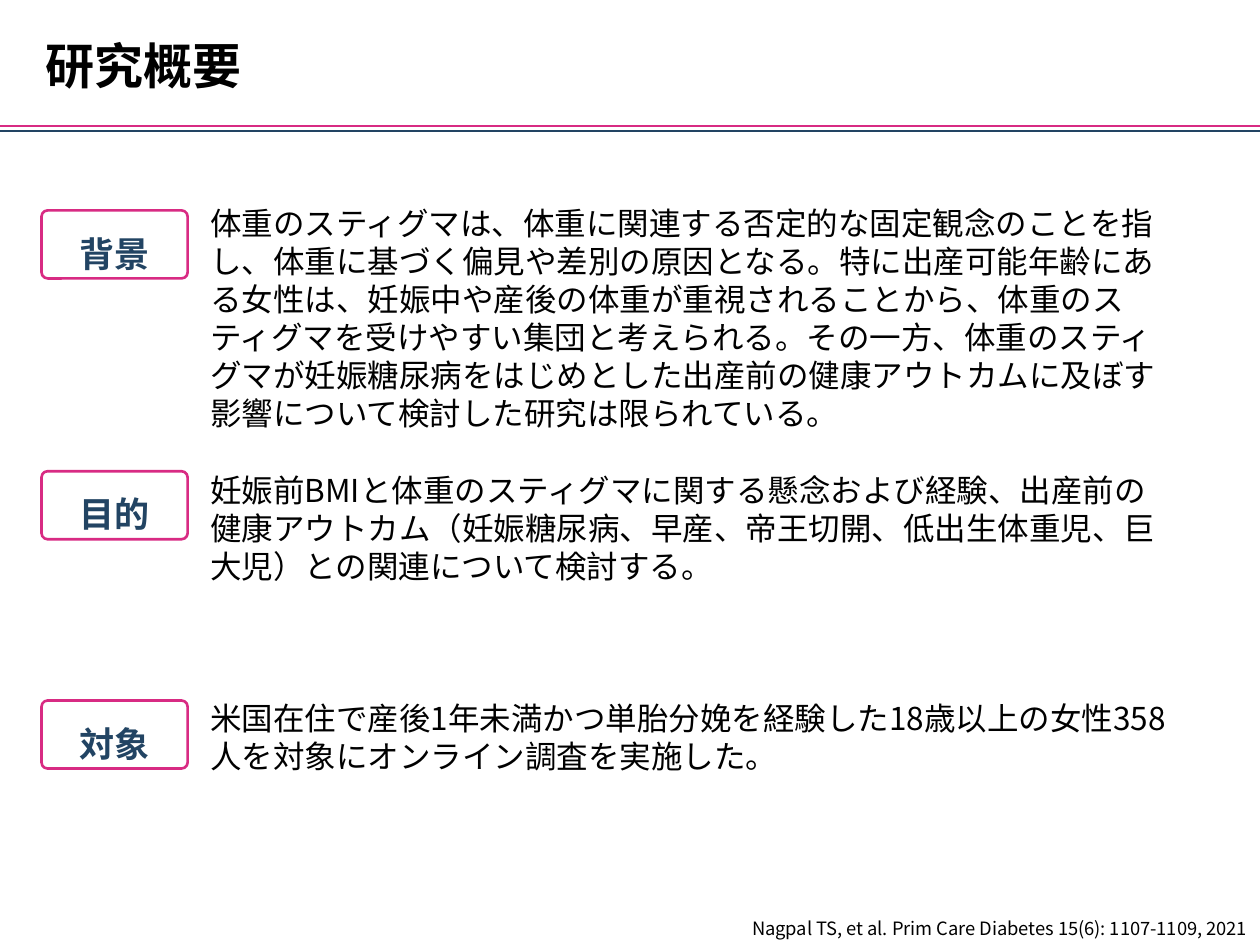
from lxml.etree import SubElement
from pptx import Presentation
from pptx.dml.color import RGBColor
from pptx.enum.shapes import MSO_CONNECTOR, MSO_SHAPE
from pptx.enum.text import MSO_ANCHOR, MSO_AUTO_SIZE, PP_ALIGN
from pptx.oxml.ns import qn
from pptx.util import Inches, Pt

FONT = "Noto Sans CJK JP"
COLORS = {"pink": "D82B83", "navy": "224463", "black": "000000"}

# label, frame top, body top, body height, body text
SECTIONS = [
    ("背景", 1.67, 1.57, 1.62,
     "体重のスティグマは、体重に関連する否定的な固定観念のことを指し、体重に基づく偏見や差別の原因となる。"
     "特に出産可能年齢にある女性は、妊娠中や産後の体重が重視されることから、体重のスティグマを受けやすい集団と考えられる。"
     "その一方、体重のスティグマが妊娠糖尿病をはじめとした出産前の健康アウトカムに及ぼす影響について検討した研究は限られている。"),
    ("目的", 3.74, 3.69, 1.01,
     "妊娠前BMIと体重のスティグマに関する懸念および経験、出産前の健康アウトカム"
     "（妊娠糖尿病、早産、帝王切開、低出生体重児、巨大児）との関連について検討する。"),
    ("対象", 5.56, 5.5, 0.71,
     "米国在住で産後1年未満かつ単胎分娩を経験した18歳以上の女性358人を対象にオンライン調査を実施した。"),
]


def write(box, text, size, color="black", bold=False, align=PP_ALIGN.LEFT,
          anchor=MSO_ANCHOR.TOP, spacing=None, wrap=True):
    """Fill a box with one paragraph, in one font for Latin and Japanese."""
    frame = box.text_frame
    frame.word_wrap = wrap
    frame.auto_size = MSO_AUTO_SIZE.NONE
    frame.vertical_anchor = anchor
    para = frame.paragraphs[0]
    para.text = text
    para.alignment = align
    if spacing:
        para.line_spacing = Pt(spacing)
    font = para.font
    font.name, font.size, font.bold = FONT, Pt(size), bold
    font.color.rgb = RGBColor.from_string(COLORS[color])
    defaults = para._p.get_or_add_pPr().get_or_add_defRPr()
    SubElement(defaults, qn("a:ea"), typeface=FONT)


deck = Presentation()
deck.slide_width, deck.slide_height = Inches(10), Inches(7.5)
slide = deck.slides.add_slide(deck.slide_layouts[5])

for top, color in ((1.04, "navy"), (1, "pink")):
    rule = slide.shapes.add_connector(
        MSO_CONNECTOR.STRAIGHT, 0, Inches(top), Inches(10), Inches(top))
    rule.line.color.rgb = RGBColor.from_string(COLORS[color])
    rule.line.width = Pt(1.5)
    SubElement(rule._element.spPr, qn("a:effectLst"))

title = slide.shapes.title
title.left, title.top = Inches(0.26), Inches(0.23)
title.width, title.height = Inches(1.77), Inches(0.57)
write(title, "研究概要", 28, bold=True, anchor=MSO_ANCHOR.MIDDLE, wrap=False)

for label, frame_top, body_top, body_height, text in SECTIONS:
    group = slide.shapes.add_group_shape()
    frame = group.shapes.add_shape(
        MSO_SHAPE.ROUNDED_RECTANGLE,
        Inches(0.33), Inches(frame_top), Inches(1.16), Inches(0.54))
    frame.adjustments[0] = 0.09
    frame.shadow.inherit = False
    frame.fill.background()
    frame.line.color.rgb = RGBColor.from_string(COLORS["pink"])
    frame.line.width = Pt(1.5)
    caption = group.shapes.add_textbox(
        Inches(0.52), Inches(frame_top + 0.04), Inches(0.78), Inches(0.46))
    write(caption, label, 20, "navy", bold=True, align=PP_ALIGN.CENTER, spacing=30)

    body = slide.shapes.add_textbox(
        Inches(1.57), Inches(body_top), Inches(7.84), Inches(body_height))
    write(body, text, 18, spacing=21.7)

citation = slide.shapes.add_textbox(Inches(5), Inches(7.22), Inches(5), Inches(0.28))
write(citation, "Nagpal TS, et al. Prim Care Diabetes 15(6): 1107-1109, 2021", 10.5,
      align=PP_ALIGN.RIGHT, anchor=MSO_ANCHOR.BOTTOM)

deck.save("out.pptx")
